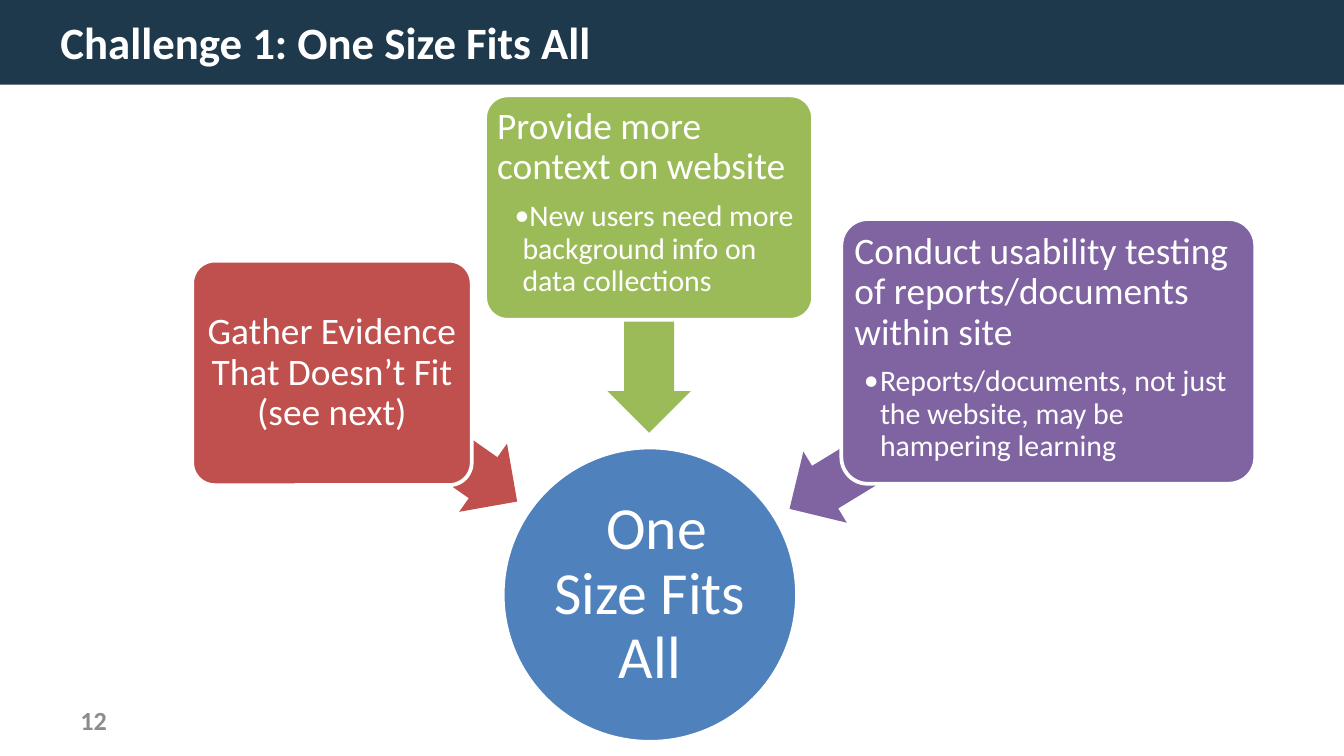
"""Build the slide 'Challenge 1: One Size Fits All'."""
from lxml.etree import SubElement
from pptx import Presentation
from pptx.dml.color import RGBColor
from pptx.enum.shapes import MSO_SHAPE
from pptx.enum.text import MSO_ANCHOR, MSO_AUTO_SIZE, PP_ALIGN
from pptx.oxml.ns import qn
from pptx.util import Inches, Pt

deck = Presentation()
deck.slide_width = Inches(10)
deck.slide_height = deck.slide_width * 9 // 16
column = deck.slide_width // 10
slide = deck.slides.add_slide(deck.slide_layouts[5])


def add_block(preset, area, color, outlined=False):
    block = slide.shapes.add_shape(preset, *[int(n * column) for n in area])
    block.shadow.inherit = False
    block.fill.solid()
    block.fill.fore_color.rgb = RGBColor.from_string(color)
    if outlined:
        block.line.color.rgb = RGBColor.from_string("FFFFFF")
        block.line.width = Pt(2)
    else:
        block.line.fill.background()
    return block


def write(paragraph, text, size, color="FFFFFF", bold=False, align=PP_ALIGN.LEFT):
    paragraph.text = text
    paragraph.alignment = align
    paragraph.font.name = "Calibri"
    paragraph.font.size = Pt(size)
    paragraph.font.bold = bold
    paragraph.font.color.rgb = RGBColor.from_string(color)


banner = add_block(MSO_SHAPE.RECTANGLE, (0, 0, 10, 0.63), "1E384C")
slide.shapes._spTree.insert(2, banner._element)

title = slide.shapes.title
title.left, title.top, title.width, title.height = [int(n * column) for n in (0.35, 0.05, 9.15, 0.52)]
title.text_frame.auto_size = MSO_AUTO_SIZE.NONE
title.text_frame.vertical_anchor = MSO_ANCHOR.MIDDLE
write(title.text_frame.paragraphs[0], "Challenge 1: One Size Fits All", 24, bold=True)

page_number = slide.shapes.add_textbox(*[int(n * column) for n in (0.5, 5.21, 2.25, 0.3)])
page_number.text_frame.word_wrap = True
page_number.text_frame.vertical_anchor = MSO_ANCHOR.MIDDLE
write(page_number.text_frame.paragraphs[0], "12", 14, "8C8C8C", True)

arrows = [
    ((2.32, 2.94, 1.68, 0.62), 215, "C0504D"),
    ((3.99, 2.07, 1.68, 0.62), 270, "9BBB59"),
    ((5.71, 2.89, 2.25, 0.62), 328.6, "8064A2"),
]
for area, angle, color in arrows:
    arrow = add_block(MSO_SHAPE.LEFT_ARROW, area, color)
    arrow.rotation = angle
    arrow.adjustments[0], arrow.adjustments[1] = 0.6, 0.5

ideas = [
    (MSO_SHAPE.OVAL, (3.74, 3.33, 2.19, 2.19), "4F81BD", 0.02, 32, " One Size Fits All", None, 0),
    (MSO_SHAPE.ROUNDED_RECTANGLE, (1.43, 1.94, 2.08, 1.67), "C0504D", 0.04, 20,
     "Gather Evidence That Doesn’t Fit (see next)", None, 0),
    (MSO_SHAPE.ROUNDED_RECTANGLE, (3.61, 0.71, 2.44, 1.67), "9BBB59", 0.04, 20,
     "Provide more context on website",
     "New users need more background info on data collections", 0.06),
    (MSO_SHAPE.ROUNDED_RECTANGLE, (6.26, 1.63, 3.08, 1.97), "8064A2", 0.04, 20,
     "Conduct usability testing of reports/documents within site",
     "Reports/documents, not just the website, may be hampering learning", 0.12),
]
for preset, area, color, inset, size, heading, detail, hanging in ideas:
    idea = add_block(preset, area, color, True)
    if preset == MSO_SHAPE.ROUNDED_RECTANGLE:
        idea.adjustments[0] = 0.1
    frame = idea.text_frame
    frame.word_wrap = True
    frame.margin_left = frame.margin_right = frame.margin_top = frame.margin_bottom = Inches(inset)
    frame.vertical_anchor = MSO_ANCHOR.TOP if detail else MSO_ANCHOR.MIDDLE
    lead = frame.paragraphs[0]
    lead.line_spacing = 0.9
    lead.space_after = Pt(size * 0.35)
    write(lead, heading, size, align=PP_ALIGN.LEFT if detail else PP_ALIGN.CENTER)
    if detail:
        point = frame.add_paragraph()
        point.level = 1
        point.line_spacing = 0.9
        point.space_after = Pt(16 * 0.15)
        properties = point._p.get_or_add_pPr()
        properties.set("marL", str(Inches(0.19)))
        properties.set("indent", str(-Inches(hanging)))
        SubElement(properties, qn("a:buFont")).set("typeface", "Calibri")
        SubElement(properties, qn("a:buChar")).set("char", "•")
        write(point, detail, 16)

deck.save("out.pptx")
